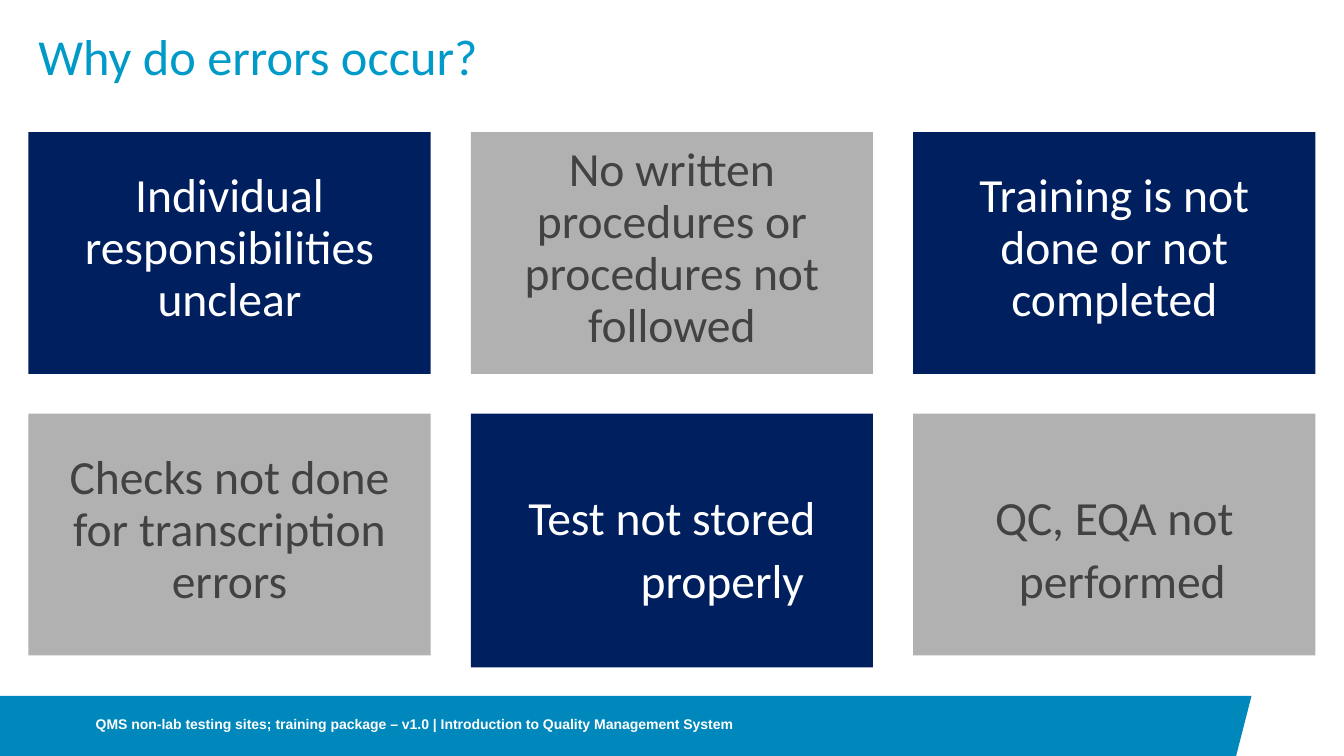
"""Build the "Why do errors occur?" slide with its grid of six causes."""
from dataclasses import dataclass

from pptx import Presentation
from pptx.dml.color import RGBColor
from pptx.enum.shapes import MSO_SHAPE
from pptx.enum.text import MSO_ANCHOR, MSO_AUTO_SIZE, PP_ALIGN
from pptx.shapes.base import BaseShape
from pptx.slide import Slide
from pptx.text.text import TextFrame
from pptx.util import Pt

RECT = MSO_SHAPE.RECTANGLE
TOP, MIDDLE = MSO_ANCHOR.TOP, MSO_ANCHOR.MIDDLE
LEFT, CENTER = PP_ALIGN.LEFT, PP_ALIGN.CENTER
NO_FIT = MSO_AUTO_SIZE.NONE
TITLE_ONLY = 5


@dataclass(frozen=True)
class Theme:
    navy: str = "001F5F"
    gray: str = "B1B1B1"
    dark: str = "424242"
    white: str = "FFFFFF"
    bar: str = "0087BC"
    title: str = "009AC9"
    body_font: str = "Calibri"
    footer_font: str = "Arial"
    title_size: float = 36
    card_size: float = 34
    footer_size: float = 10


@dataclass(frozen=True)
class Card:
    text: str
    inset_top: float
    margin: float
    hanging: float = 0
    spacing: float = 0.91
    height: float = 172.8


THEME = Theme()
COLUMNS = 3
GRID_LEFT, GRID_TOP = 20.3, 94.4
CARD_WIDTH = 287.3
PITCH_X, PITCH_Y = 316, 201
CARDS = [
    Card("Individual responsibilities unclear", 28, 38),
    Card("No written procedures or procedures not followed", 9.4, 36),
    Card("Training is not done or not completed", 28, 42),
    Card("Checks not done for transcription errors", 28, 24),
    Card("Test not stored properly", 49, 13, 72, 1.1, 181.4),
    Card("QC, EQA not performed", 49, 58.3, 11.5, 1.1),
]
BAR_OUTLINE = [(0, 496.8), (894.2, 496.8), (883.2, 540), (0, 540)]
FOOTER = ("QMS non-lab testing sites; training package – v1.0 | "
          "Introduction to Quality Management System")


def paint(s: BaseShape, color: str) -> None:
    """Give a shape a flat fill without line or shadow."""
    s.shadow.inherit = False
    s.fill.solid()
    s.fill.fore_color.rgb = RGBColor.from_string(color)
    s.line.fill.background()


def place(s: BaseShape, left: float, top: float, width: float, height: float) -> None:
    """Position a shape in points."""
    s.left, s.top, s.width, s.height = Pt(left), Pt(top), Pt(width), Pt(height)


def write(tf: TextFrame, text: str, font: str, size: float, color: str,
          align: PP_ALIGN = LEFT, anchor: MSO_ANCHOR = TOP, bold: bool = False,
          insets: tuple[float, float, float, float] = (0, 0, 0, 0)) -> None:
    """Fill a text frame with one formatted paragraph."""
    tf.text = text
    tf.word_wrap = True
    tf.auto_size = NO_FIT
    tf.vertical_anchor = anchor
    tf.margin_left, tf.margin_top, tf.margin_right, tf.margin_bottom = map(Pt, insets)
    p = tf.paragraphs[0]
    p.alignment = align
    r = p.runs[0]
    r.font.name, r.font.size, r.font.bold = font, Pt(size), bold
    r.font.color.rgb = RGBColor.from_string(color)


def add_bar(slide: Slide) -> None:
    """Draw the slanted footer bar."""
    builder = slide.shapes.build_freeform(*BAR_OUTLINE[0], scale=Pt(1))
    builder.add_line_segments(BAR_OUTLINE[1:], close=True)
    paint(builder.convert_to_shape(), THEME.bar)


def add_card(slide: Slide, index: int, card: Card) -> None:
    """Draw one cause in its grid cell, alternating the two colour schemes."""
    row, col = divmod(index, COLUMNS)
    fill, ink = [(THEME.navy, THEME.white), (THEME.gray, THEME.dark)][index % 2]
    s = slide.shapes.add_shape(
        RECT, Pt(GRID_LEFT + col * PITCH_X), Pt(GRID_TOP + row * PITCH_Y),
        Pt(CARD_WIDTH), Pt(card.height))
    paint(s, fill)
    write(s.text_frame, card.text, THEME.body_font, THEME.card_size, ink,
          CENTER, insets=(0, card.inset_top, 0, 0))
    p = s.text_frame.paragraphs[0]
    p.line_spacing = card.spacing
    indents = {"marL": card.margin + card.hanging, "marR": card.margin,
               "indent": -card.hanging}
    for name, value in indents.items():
        p._p.get_or_add_pPr().set(name, str(int(Pt(value))))


def main() -> None:
    """Assemble and save the slide."""
    prs = Presentation()
    prs.slide_width, prs.slide_height = Pt(960), Pt(540)
    slide = prs.slides.add_slide(prs.slide_layouts[TITLE_ONLY])
    add_bar(slide)
    for index, card in enumerate(CARDS):
        add_card(slide, index, card)
    title = slide.shapes.title
    place(title, 20.2, 14.4, 509, 50.4)
    write(title.text_frame, "Why do errors occur?", THEME.body_font,
          THEME.title_size, THEME.title, insets=(7.2, 3.6, 7.2, 3.6))
    footer = slide.shapes.add_textbox(Pt(68.4), Pt(497.4), Pt(576), Pt(39.6))
    write(footer.text_frame, FOOTER, THEME.footer_font, THEME.footer_size,
          THEME.white, anchor=MIDDLE, bold=True)
    prs.save("out.pptx")


if __name__ == "__main__":
    main()
